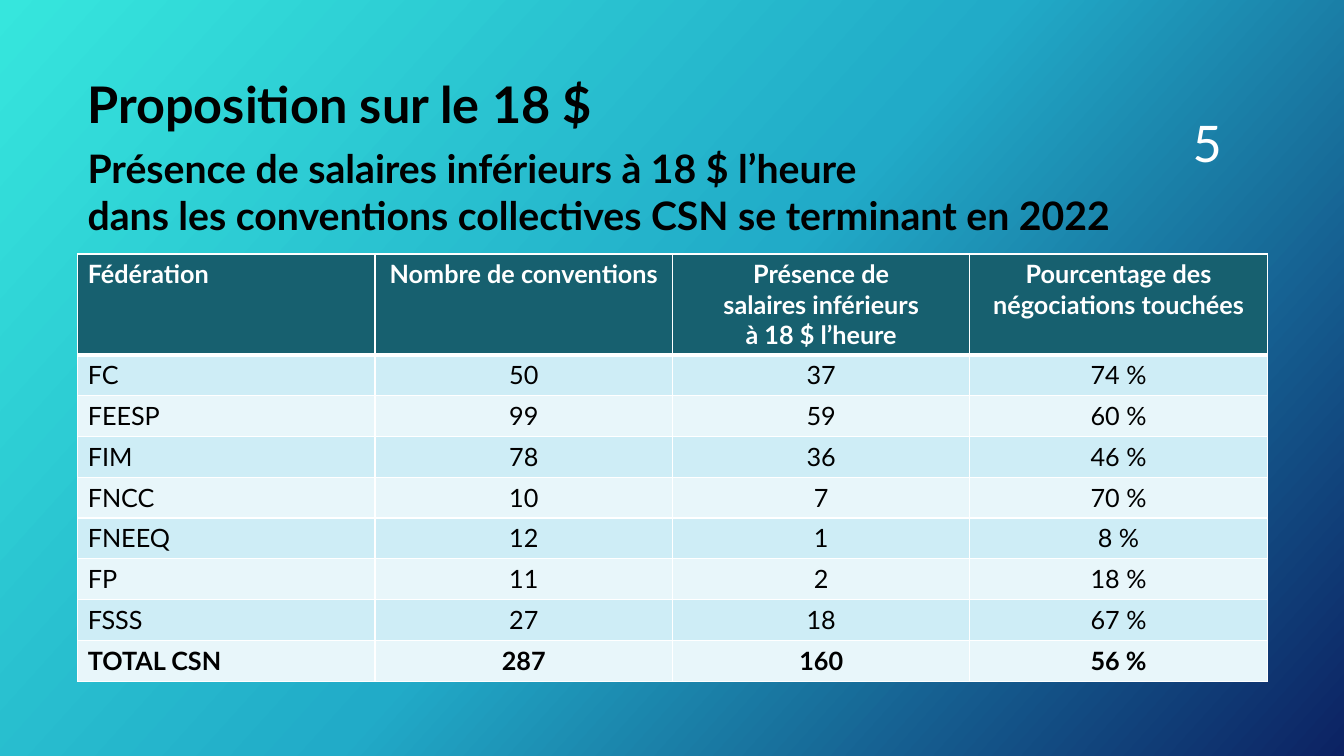
from lxml import etree
from pptx import Presentation
from pptx.dml.color import RGBColor
from pptx.enum.text import MSO_ANCHOR, PP_ALIGN
from pptx.oxml.ns import qn
from pptx.util import Inches, Pt

LEFT, CENTER = PP_ALIGN.LEFT, PP_ALIGN.CENTER
TOP, MIDDLE = MSO_ANCHOR.TOP, MSO_ANCHOR.MIDDLE
BLACK, WHITE = "000000", "FFFFFF"
HEADER_FILL = "17606F"
BAND_FILLS = ["E8F6FA", "CEEDF6"]
GRADIENT_STOPS = [(0, "36E6DD"), (50, "21ABC8"), (100, "0C2263")]

FEDERATIONS = [
    ["Fédération", "Nombre de conventions",
     "Présence de\nsalaires inférieurs\nà 18 $ l’heure",
     "Pourcentage des négociations touchées"],
    ["FC", "50", "37", "74 %"],
    ["FEESP", "99", "59", "60 %"],
    ["FIM", "78", "36", "46 %"],
    ["FNCC", "10", "7", "70 %"],
    ["FNEEQ", "12", "1", "8 %"],
    ["FP", "11", "2", "18 %"],
    ["FSSS", "27", "18", "67 %"],
    ["TOTAL CSN", "287", "160", "56 %"],
]


def color(value):
    return RGBColor.from_string(value)


class SlideBuilder:
    font_name = "Lato"

    def __init__(self, presentation):
        self.width = presentation.slide_width
        self.height = presentation.slide_height
        self.slide = presentation.slides.add_slide(presentation.slide_layouts[6])

    def across(self, percent):
        return round(self.width * percent / 100)

    def down(self, percent):
        return round(self.height * percent / 100)

    def background(self, stops, clockwise_angle):
        fill = self.slide.background.fill
        fill.gradient()
        fill.gradient_angle = 360 - clockwise_angle
        stop_list = self.slide.element.find(".//" + qn("a:gsLst"))
        for stop in list(stop_list):
            stop_list.remove(stop)
        for position, value in stops:
            stop = etree.SubElement(stop_list, qn("a:gs"), pos=str(position * 1000))
            etree.SubElement(stop, qn("a:srgbClr"), val=value)

    def add_lines(self, paragraph, text, size, value, bold, align=LEFT):
        paragraph.alignment = align
        for index, line in enumerate(text.split("\n")):
            if index:
                paragraph.add_line_break()
            run = paragraph.add_run()
            run.text = line
            run.font.name = self.font_name
            run.font.size = Pt(size)
            run.font.bold = bold
            run.font.color.rgb = color(value)

    def text(self, left, top, width, height, text, size, value=BLACK,
             bold=True, anchor=TOP, spacing=1.0):
        shape = self.slide.shapes.add_textbox(
            self.across(left), self.down(top), self.across(width), self.down(height))
        frame = shape.text_frame
        frame.word_wrap = True
        frame.vertical_anchor = anchor
        frame.paragraphs[0].line_spacing = spacing
        self.add_lines(frame.paragraphs[0], text, size, value, bold)

    def borders(self, cell, top, bottom):
        properties = cell._tc.get_or_add_tcPr()
        sides = [("L", 1), ("R", 1), ("T", top), ("B", bottom)]
        for index, (side, points) in enumerate(sides):
            line = etree.Element(qn("a:ln" + side), w=str(Pt(points)))
            fill = etree.SubElement(line, qn("a:solidFill"))
            etree.SubElement(fill, qn("a:srgbClr"), val=WHITE)
            properties.insert(index, line)

    def table(self, left, top, width, header_height, row_height, rows):
        last = len(rows) - 1
        table = self.slide.shapes.add_table(
            len(rows), len(rows[0]), self.across(left), self.down(top),
            self.across(width), self.down(header_height + row_height * last)).table
        for column in table.columns:
            column.width = self.across(width / len(rows[0]))
        for row_index, values in enumerate(rows):
            header = row_index == 0
            table.rows[row_index].height = self.down(header_height if header else row_height)
            for column_index, text in enumerate(values):
                cell = table.cell(row_index, column_index)
                cell.fill.solid()
                cell.fill.fore_color.rgb = color(
                    HEADER_FILL if header else BAND_FILLS[row_index % 2])
                self.borders(cell, 3 if row_index == 1 else 1, 3 if header else 1)
                self.add_lines(cell.text_frame.paragraphs[0], text, 18,
                               WHITE if header else BLACK, row_index in (0, last),
                               CENTER if column_index else LEFT)


def main():
    presentation = Presentation()
    presentation.slide_width = Inches(13.33)
    presentation.slide_height = Inches(7.5)
    builder = SlideBuilder(presentation)
    builder.background(GRADIENT_STOPS, 42)
    builder.text(5.78, 9.87, 80.2, 8.67, "Proposition sur le 18 $", 36, spacing=0.9)
    builder.text(5.78, 18.4, 94.22, 13.87,
                 "Présence de salaires inférieurs à 18 $ l’heure\n"
                 "dans les conventions collectives CSN se terminant en 2022", 28)
    builder.table(5.78, 33.6, 88.52, 13.33, 5.4, FEDERATIONS)
    builder.text(88, 10.93, 9.45, 15.87, "5", 36, WHITE, bold=False, anchor=MIDDLE)
    presentation.save("out.pptx")


if __name__ == "__main__":
    main()
